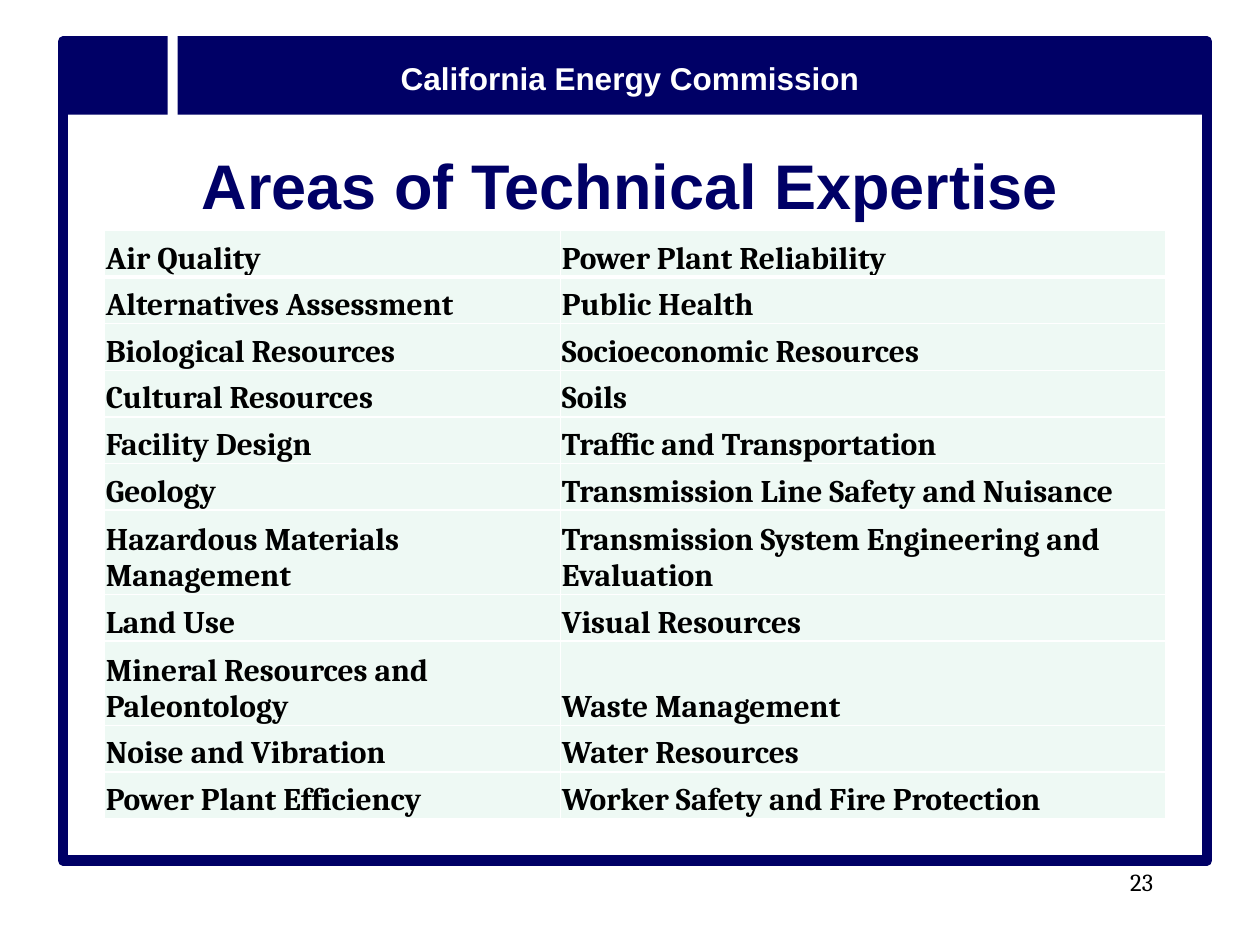
from pptx import Presentation, oxml
from pptx.dml.color import RGBColor
from pptx.enum import shapes, text
from pptx.util import Inches, Pt

NAVY, WHITE, BLACK, MINT = "000066", "FFFFFF", "000000", "EEF9F4"
DRAWING = "http://schemas.openxmlformats.org/drawingml/2006/main"

AREAS = [
    ("Air Quality", "Power Plant Reliability"),
    ("Alternatives Assessment", "Public Health"),
    ("Biological Resources", "Socioeconomic Resources"),
    ("Cultural Resources", "Soils"),
    ("Facility Design", "Traffic and Transportation"),
    ("Geology", "Transmission Line Safety and Nuisance"),
    ("Hazardous Materials Management", "Transmission System Engineering and Evaluation"),
    ("Land Use", "Visual Resources"),
    ("Mineral Resources and Paleontology", "Waste Management"),
    ("Noise and Vibration", "Water Resources"),
    ("Power Plant Efficiency", "Worker Safety and Fire Protection"),
]
TALL_ROWS = (6, 8)


def color(value):
    return RGBColor.from_string(value)


class Page:
    def __init__(self, deck):
        self.slide = deck.slides.add_slide(deck.slide_layouts[5])
        self.heading_font = "Arial"
        self.body_font = "Cambria"

    def set_words(self, frame, words, font, size, ink, bold=True,
                  align=text.PP_ALIGN.LEFT):
        frame.text = words
        frame.word_wrap = True
        para = frame.paragraphs[0]
        para.alignment = align
        span = para.runs[0].font
        span.name, span.size, span.bold = font, Pt(size), bold
        span.color.rgb = color(ink)

    def rectangle(self, left, top, width, height, fill=None, line=None, weight=1):
        box = self.slide.shapes.add_shape(
            shapes.MSO_SHAPE.RECTANGLE,
            Inches(left), Inches(top), Inches(width), Inches(height))
        box.shadow.inherit = False
        if fill:
            box.fill.solid()
            box.fill.fore_color.rgb = color(fill)
        else:
            box.fill.background()
        if line:
            box.line.color.rgb = color(line)
            box.line.width = Pt(weight)
        else:
            box.line.fill.background()

    def label(self, left, top, width, height, words, **style):
        box = self.slide.shapes.add_textbox(
            Inches(left), Inches(top), Inches(width), Inches(height))
        self.set_words(box.text_frame, words, **style)

    def title(self, left, top, width, height, words):
        box = self.slide.shapes.title
        box.left, box.top = Inches(left), Inches(top)
        box.width, box.height = Inches(width), Inches(height)
        self.set_words(box.text_frame, words, self.heading_font, 36, NAVY,
                       align=text.PP_ALIGN.CENTER)
        box.text_frame.vertical_anchor = text.MSO_ANCHOR.MIDDLE

    def borders(self, cell, top, bottom):
        weights = {"lnL": 1, "lnR": 1, "lnT": top, "lnB": bottom}
        properties = cell._tc.get_or_add_tcPr()
        for position, (side, weight) in enumerate(weights.items()):
            properties.insert(position, oxml.parse_xml(
                f'<a:{side} xmlns:a="{DRAWING}" w="{Pt(weight)}"><a:solidFill>'
                f'<a:srgbClr val="{WHITE}"/></a:solidFill></a:{side}>'))

    def table(self, left, top, widths, heights, rows):
        grid = self.slide.shapes.add_table(
            len(rows), len(widths), Inches(left), Inches(top),
            Inches(sum(widths)), Inches(sum(heights))).table
        for column, width in zip(grid.columns, widths):
            column.width = Inches(width)
        for index, (row, height, entries) in enumerate(zip(grid.rows, heights, rows)):
            row.height = Inches(height)
            for cell, words in zip(row.cells, entries):
                cell.margin_left = cell.margin_right = cell.margin_top = Inches(0.01)
                cell.margin_bottom = 0
                cell.vertical_anchor = text.MSO_ANCHOR.BOTTOM
                cell.fill.solid()
                cell.fill.fore_color.rgb = color(MINT)
                self.set_words(cell.text_frame, words, self.body_font, 18, BLACK)
                self.borders(cell, top=3 if index == 1 else 1,
                             bottom=3 if index == 0 else 1)


def main():
    deck = Presentation()
    deck.slide_width, deck.slide_height = Inches(10), Inches(7.5)
    page = Page(deck)
    page.rectangle(0.5, 0.33, 9.08, 6.5, line=NAVY, weight=6)
    page.rectangle(0.5, 0.33, 9.08, 0.58, fill=NAVY)
    page.label(0.5, 0.42, 9, 0.4, "California Energy Commission",
               font=page.heading_font, size=18, ink=WHITE,
               align=text.PP_ALIGN.CENTER)
    page.rectangle(1.33, 0.25, 0.08, 0.67, fill=WHITE)
    page.title(0.75, 1, 8.5, 0.92, "Areas of Technical Expertise")
    heights = [0.67 if index in TALL_ROWS else 0.37 for index in range(len(AREAS))]
    page.table(0.83, 1.83, [3.62, 4.8], heights, AREAS)
    page.label(7.17, 6.83, 2.08, 0.5, "23", font=page.body_font, size=14,
               ink=BLACK, bold=False, align=text.PP_ALIGN.RIGHT)
    deck.save("out.pptx")


if __name__ == "__main__":
    main()
